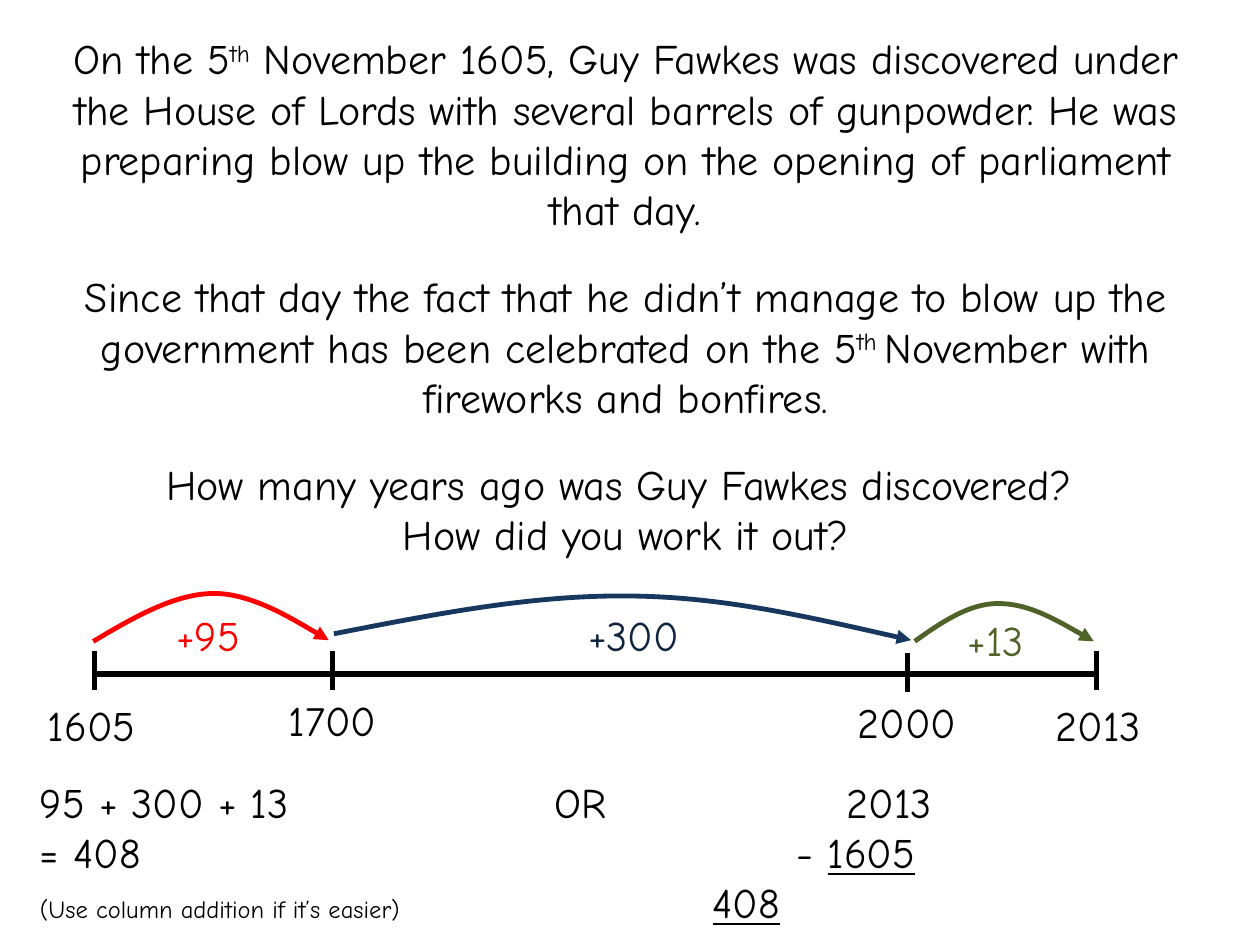
from lxml import etree
from pptx import Presentation
from pptx.dml.color import RGBColor
from pptx.enum import shapes, text
from pptx.oxml import ns
from pptx.util import Pt

FONT = "Comic Neue"
COLOURS = {
    "black": "000000",
    "white": "FFFFFF",
    "red": "FF0000",
    "blue": "17375E",
    "navy": "0F243E",
    "green": "4F6228",
}
LEFT, WIDTH = 20.2, 674.6
AXIS_Y = 385.2
TICKS = [(54, 372.2), (190.1, 372.2), (518.4, 373), (626.4, 372.2)]
TICK_HEIGHT = 22.3
JUMPS = [
    ("red", [(53.3, 366.5), (76.3, 352.8), (100.1, 339.1), (122.4, 339.1),
             (144.7, 339.1), (187.9, 365.8), (187.9, 365.8)]),
    ("blue", [(190.8, 362.2), (246.2, 351.4), (301.7, 340.3), (356.4, 340.6),
              (411.8, 340.6), (465.8, 353.5), (520.6, 365.8)]),
    ("green", [(522.7, 366.5), (537.8, 355.7), (553.7, 344.9), (570.2, 344.9),
               (587.5, 344.9), (606.2, 355.7), (625, 366.5)]),
]
LABELS = [
    ("1700", 150.5, 393.1, 79.2, "black", True),
    ("2000", 478.8, 394.6, 79.2, "black", True),
    ("+95", 93.6, 344.9, 56.9, "red", False),
    ("+300", 329, 344.9, 82.1, "navy", False),
    ("+13", 545.8, 347.8, 56.9, "green", False),
]


def rgb(name):
    return RGBColor.from_string(COLOURS[name])


def add_tabs(p, stops):
    tabs = etree.SubElement(p._p.get_or_add_pPr(), ns.qn("a:tabLst"))
    for stop in stops:
        etree.SubElement(tabs, ns.qn("a:tab"), pos=str(int(Pt(stop))), algn="l")


def write(p, runs, colour="black", centred=False, tabs=()):
    p.alignment = text.PP_ALIGN.CENTER if centred else text.PP_ALIGN.LEFT
    if tabs:
        add_tabs(p, tabs)
    p.font.name, p.font.size = FONT, Pt(24)
    p.font.color.rgb = rgb(colour)
    for content, style in runs:
        if style == "break":
            p.add_line_break()
        r = p.add_run()
        r.text = content
        if style == "super":
            r._r.get_or_add_rPr().set("baseline", "30000")
        elif style == "underline":
            r.font.underline = True
        elif style == "small":
            r.font.size = Pt(14)


def add_panel(s, top, height, paragraphs, anchor=text.MSO_ANCHOR.TOP,
              left=LEFT, centred=False):
    sp = s.shapes.add_shape(shapes.MSO_SHAPE.RECTANGLE,
                            Pt(left), Pt(top), Pt(WIDTH), Pt(height))
    sp.shadow.inherit = False
    sp.fill.solid()
    sp.fill.fore_color.rgb = rgb("white")
    colour = sp._element.spPr.find(".//" + ns.qn("a:srgbClr"))
    etree.SubElement(colour, ns.qn("a:alpha"), val="63000")
    sp.line.fill.background()
    tf = sp.text_frame
    tf.word_wrap = True
    tf.vertical_anchor = anchor
    for i, (runs, tabs) in enumerate(paragraphs):
        p = tf.add_paragraph() if i else tf.paragraphs[0]
        write(p, runs, centred=centred, tabs=tabs)


def add_label(s, content, left, top, width, colour, centred):
    tf = s.shapes.add_textbox(Pt(left), Pt(top), Pt(width), Pt(36)).text_frame
    tf.word_wrap = True
    write(tf.paragraphs[0], [(content, None)], colour, centred)


def add_line(s, x1, y1, x2, y2, weight):
    line = s.shapes.add_connector(shapes.MSO_CONNECTOR.STRAIGHT,
                                  Pt(x1), Pt(y1), Pt(x2), Pt(y2))
    line.line.width = Pt(weight)
    line.line.color.rgb = rgb("black")
    etree.SubElement(line._element.spPr, ns.qn("a:effectLst"))


def add_jump(s, colour, points):
    start, *rest = [(Pt(x), Pt(y)) for x, y in points]
    builder = s.shapes.build_freeform(*start)
    builder.add_line_segments(rest, close=False)
    sp = builder.convert_to_shape()
    segments = list(sp._element.iter(ns.qn("a:lnTo")))
    for i in range(0, len(segments), 3):
        curve = etree.Element(ns.qn("a:cubicBezTo"))
        segments[i].addprevious(curve)
        for segment in segments[i:i + 3]:
            curve.append(segment[0])
            segment.getparent().remove(segment)
    sp.shadow.inherit = False
    sp.fill.background()
    sp.line.width = Pt(2.75)
    sp.line.color.rgb = rgb(colour)
    etree.SubElement(sp.line._get_or_add_ln(), ns.qn("a:tailEnd"), type="triangle")


def add_number_line(s):
    add_panel(s, 337.7, 94.3, [([("1605\t2013", None)], [576])],
              anchor=text.MSO_ANCHOR.BOTTOM)
    add_line(s, TICKS[0][0], AXIS_Y, TICKS[-1][0], AXIS_Y, 3)
    for x, y in TICKS:
        add_line(s, x, y, x, y + TICK_HEIGHT, 2.75)
    for colour, points in JUMPS:
        add_jump(s, colour, points)
    for label in LABELS:
        add_label(s, *label)


def main():
    prs = Presentation()
    prs.slide_width, prs.slide_height = Pt(720), Pt(540)
    s = prs.slides.add_slide(prs.slide_layouts[6])
    add_panel(s, 15.1, 123.8, [([
        ("On the 5", None), ("th", "super"),
        (" November 1605, Guy Fawkes was discovered under the House of Lords "
         "with several barrels of gunpowder. He was preparing blow up the "
         "building on the opening of parliament that day.", None)], [])],
        centred=True)
    add_panel(s, 151.2, 94.3, [([
        ("Since that day the fact that he didn’t manage to blow up the "
         "government has been celebrated on the 5", None), ("th ", "super"),
        ("November with fireworks and bonfires.", None)], [])], centred=True)
    add_panel(s, 258.5, 65.5, [([
        ("How many years ago was Guy Fawkes discovered? ", None),
        ("How did you work it out?", "break")], [])], centred=True)
    add_number_line(s)
    add_panel(s, 439.9, 94.3, [
        ([("95 + 300 + 13\tOR\t2013", None)], [294, 461]),
        ([("= 408\t- ", None), ("1605", "underline")], [432.4]),
        ([("(Use column addition if it’s easier)", "small"), ("\t", None),
          ("\t408", "underline")], [368.4, 384.4]),
    ], left=15.8)
    prs.save("out.pptx")


if __name__ == "__main__":
    main()
